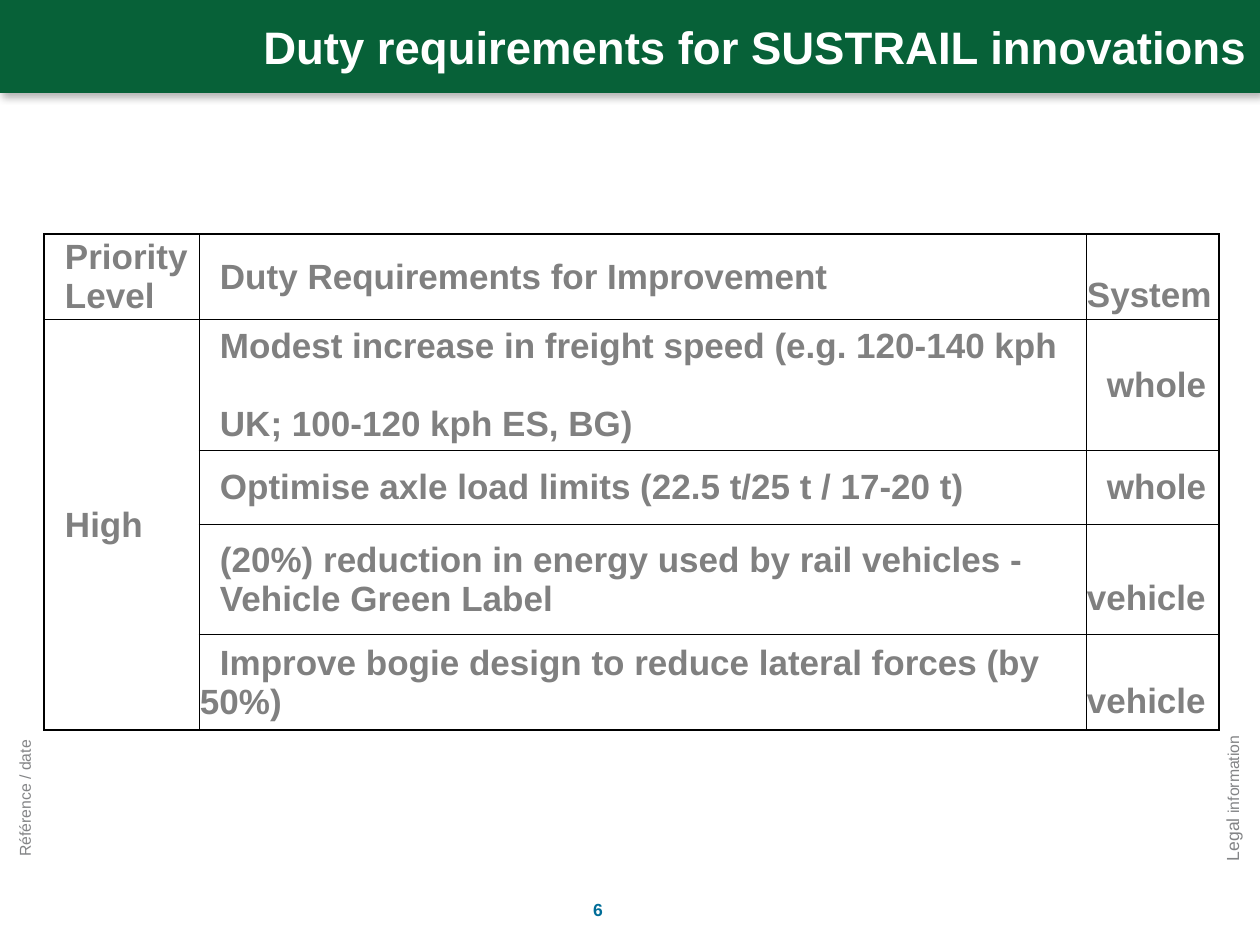
from lxml import etree
from pptx import Presentation, util as u
from pptx.dml.color import RGBColor
from pptx.enum import text as t
from pptx.oxml import parse_xml
from pptx.oxml.ns import nsdecls, qn

# Content
TITLE = "Duty requirements for SUSTRAIL innovations"
ROWS = [
    (["Priority", "Level"], ["Duty Requirements for Improvement"], ["System"]),
    (["High"],
     ["Modest increase in freight speed (e.g. 120-140 kph", "UK; 100-120 kph ES, BG)"],
     ["whole"]),
    ([], ["Optimise axle load limits (22.5 t/25 t / 17-20 t)"], ["whole"]),
    ([], ["(20%) reduction in energy used by rail vehicles -", "Vehicle Green Label"],
     ["vehicle"]),
    ([], ["Improve bogie design to reduce lateral forces (by 50%)"], ["vehicle"]),
]
# (box in px, rotation, alignment, bold, colour, runs with sizes)
LABELS = [
    ((882, 496, 711, 44), 270, "LEFT", False, "grey", [("Legal ", 10), ("information", 9)]),
    ((-324, 491, 711, 45), 270, "LEFT", False, "grey", [("Référence / date", 9)]),
    ((451, 893, 294, 26), 0, "CENTER", True, "blue", [("6", 10)]),
]
COLORS = {"green": "076138", "white": "FFFFFF", "grey": "838486",
          "table": "808080", "blue": "006D98", "line": "000000"}
FONT = "Arial"

# Layout in px
PX = 914400 // 126
TABLE_LEFT, TABLE_TOP = 44, 234
COLUMN_WIDTHS = [155, 887, 133]
ROW_HEIGHTS = [79, 131, 74, 110, 96]
INDENT, LINE_HEIGHT = 20, 38
FLUSH_WORDS = ("System", "vehicle")      # set flush left and half a line lower
HANGING_ROW, SPACED_ROW = 4, 1           # first-line indent only; gap between lines


def px(*values):
    return [u.Emu(value * PX) for value in values]


def style(font, size, color, bold):
    font.name, font.size, font.bold = FONT, u.Pt(size), bold
    font.color.rgb = RGBColor.from_string(COLORS[color])


def add_border(cell, side, points):
    cell._tc.get_or_add_tcPr().append(parse_xml(
        f'<a:ln{side} {nsdecls("a")} w="{int(points * 12700)}"><a:solidFill>'
        f'<a:srgbClr val="{COLORS["line"]}"/></a:solidFill></a:ln{side}>'))


def border_cell(cell, row, column):
    last_row, last_column = len(ROWS) - 1, len(COLUMN_WIDTHS) - 1
    add_border(cell, "L", 1 if column == 0 else 0.5)
    add_border(cell, "R", 1 if column == last_column else 0.5)
    if not cell.is_spanned:
        add_border(cell, "T", 1 if row == 0 else 0.5)
    if not cell.is_spanned or row == last_row:
        add_border(cell, "B", 1 if row == last_row or cell.is_merge_origin else 0.5)


def fill_cell(cell, row, column, lines):
    flush = lines[0] in FLUSH_WORDS
    hanging = (row, column) == (HANGING_ROW, 1)
    cell.vertical_anchor = t.MSO_ANCHOR.MIDDLE
    cell.margin_left, cell.margin_top, cell.margin_right, cell.margin_bottom = px(
        1 if flush or hanging else INDENT + 1, LINE_HEIGHT if flush else 1, 1, 0)
    cell.text_frame.text = "\n".join(lines)
    for number, paragraph in enumerate(cell.text_frame.paragraphs):
        if hanging:
            properties = paragraph._p.get_or_add_pPr()
            properties.set("marL", "0")
            properties.set("indent", str(INDENT * PX))
        if row == SPACED_ROW and number:
            paragraph.space_before = u.Pt(22.5)
        for run in paragraph.runs:
            style(run.font, 20, "table", True)


presentation = Presentation()
presentation.slide_width, presentation.slide_height = u.Inches(10), u.Inches(7.5)
slide = presentation.slides.add_slide(presentation.slide_layouts[5])

# Title band with its shadow
title = slide.shapes.title
title.left, title.top, title.width, title.height = px(0, 0, 1260, 93)
title.fill.solid()
title.fill.fore_color.rgb = RGBColor.from_string(COLORS["green"])
title.shadow.inherit = False
effects = title._element.spPr.find(qn("a:effectLst"))
shadow = etree.SubElement(effects, qn("a:outerShdw"), blurRad="57150", dist="33020",
                          dir="3180000", algn="tl", rotWithShape="0")
shadow_color = etree.SubElement(shadow, qn("a:srgbClr"), val=COLORS["line"])
etree.SubElement(shadow_color, qn("a:alpha"), val="30000")
title.text_frame.text = TITLE
title.text_frame.vertical_anchor = t.MSO_ANCHOR.MIDDLE
title.text_frame.paragraphs[0].alignment = t.PP_ALIGN.RIGHT
style(title.text_frame.paragraphs[0].runs[0].font, 26, "white", True)

# Side labels and page number
for box, rotation, alignment, bold, color, runs in LABELS:
    label = slide.shapes.add_textbox(*px(*box))
    label.rotation = rotation
    label.text_frame.word_wrap = True
    paragraph = label.text_frame.paragraphs[0]
    paragraph.alignment = t.PP_ALIGN[alignment]
    for words, size in runs:
        run = paragraph.add_run()
        run.text = words
        style(run.font, size, color, bold)

# Requirements table
table = slide.shapes.add_table(
    len(ROWS), len(COLUMN_WIDTHS),
    *px(TABLE_LEFT, TABLE_TOP, sum(COLUMN_WIDTHS), sum(ROW_HEIGHTS))).table
table.first_row = table.horz_banding = False
for column, width in zip(table.columns, px(*COLUMN_WIDTHS)):
    column.width = width
for row, height in zip(table.rows, px(*ROW_HEIGHTS)):
    row.height = height
table.cell(1, 0).merge(table.cell(len(ROWS) - 1, 0))
for row, contents in enumerate(ROWS):
    for column, lines in enumerate(contents):
        cell = table.cell(row, column)
        border_cell(cell, row, column)
        cell.fill.background()
        if lines:
            fill_cell(cell, row, column, lines)

presentation.save("out.pptx")
